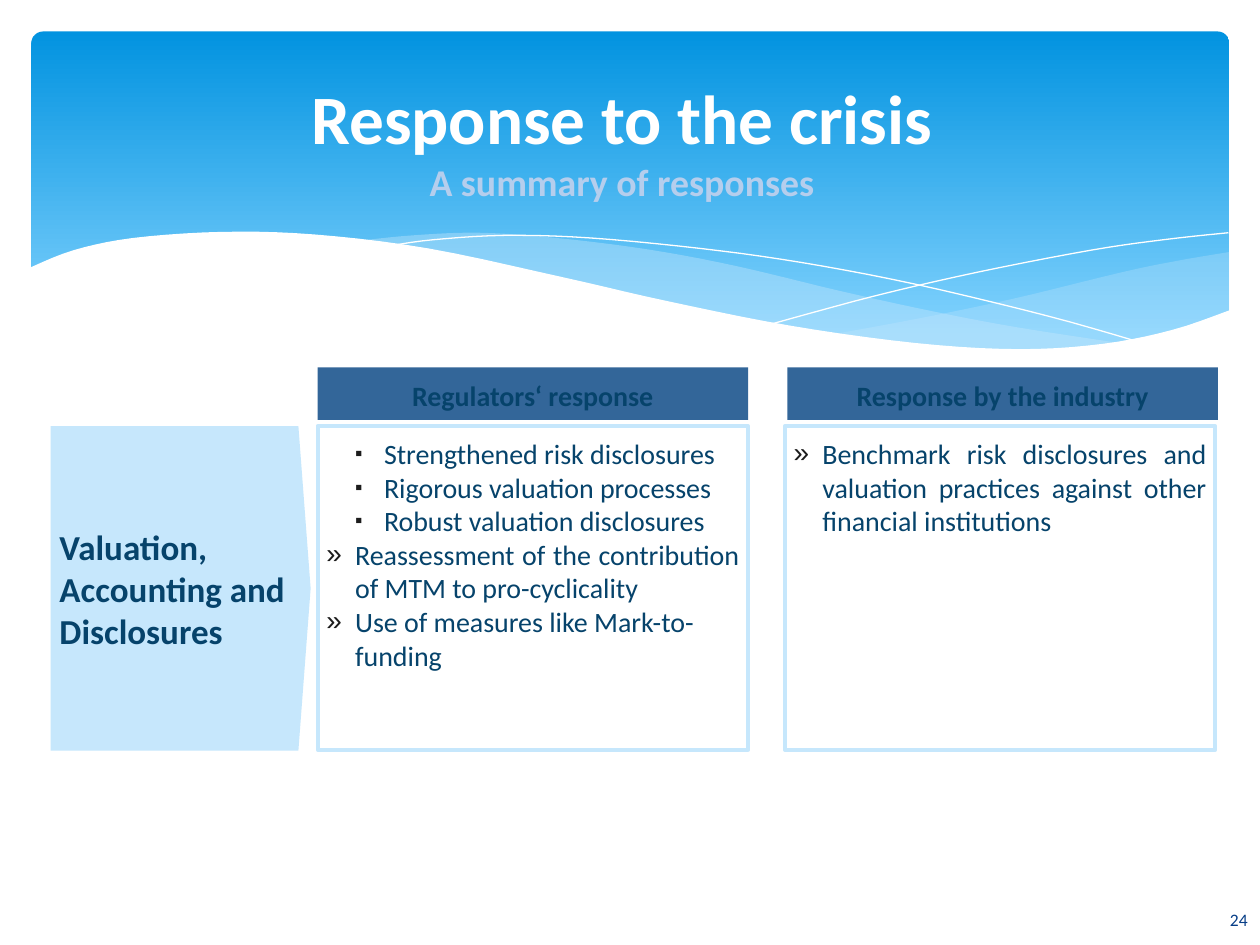
from dataclasses import dataclass

from lxml import etree
from pptx import Presentation
from pptx import util as u
from pptx.dml.color import RGBColor
from pptx.enum import shapes, text
from pptx.oxml.ns import qn

Pt = u.Pt


@dataclass(frozen=True)
class Theme:
    font: str = "Calibri"
    white: str = "FFFFFF"
    sky_top: str = "0293E0"
    sky_bottom: str = "83D3FE"
    pale: str = "C6E7FC"
    header: str = "336699"
    ink: str = "06436B"
    bullet: str = "1C1C1C"
    subtitle: str = "B5CEED"
    number: str = "073E87"
    title_size: float = 39.6
    subtitle_size: float = 21.6
    label_size: float = 20
    body_size: float = 16
    number_size: float = 10


THEME = Theme()
LEFT, CENTER = text.PP_ALIGN.LEFT, text.PP_ALIGN.CENTER
RIGHT, JUSTIFY = text.PP_ALIGN.RIGHT, text.PP_ALIGN.JUSTIFY
MIDDLE, TOP = text.MSO_ANCHOR.MIDDLE, text.MSO_ANCHOR.TOP

# Knots of the smooth edges, in points.
WHITE_EDGE = [(17, 153), (42, 143), (76, 136), (127, 132.5), (180, 134), (245, 142),
              (322, 158.5), (381, 172), (451, 186), (523, 196), (582, 199.5),
              (630, 196.5), (670, 188.5), (703.5, 177)]
RIGHT_UPPER = [(476, 191), (525, 182), (580, 170.5), (641.5, 155.5), (673, 149), (702.5, 144)]
RIGHT_LOWER = [(702.5, 178), (673, 188.5), (640, 196), (601, 199.5), (562, 199.5),
               (518, 196), (476, 191)]
MIDDLE_UPPER = [(206, 137.5), (236, 134.5), (273.5, 133), (318, 136), (370, 142.5),
                (420.5, 152), (481, 166.5), (533.5, 178), (581, 187), (643, 196.5)]
MIDDLE_LOWER = [(643, 196.5), (610.5, 199.5), (573, 200), (530, 198), (479, 191.5),
                (407.5, 178.5), (323, 160), (261, 146), (206, 137.5)]
FALLING_LINE = [(222.5, 140.5), (247.5, 137), (288.5, 134.5), (337.5, 136), (400.5, 142),
                (458, 150), (523.5, 162.5), (598.5, 180.5), (653, 196)]
RISING_LINE = [(441.5, 185), (500.5, 169), (559, 155.5), (623.5, 143), (665, 137), (702, 133)]

COLUMNS = [
    ("Regulators‘ response", 181.5, 181.5, [
        ("Strengthened risk disclosures", 1, JUSTIFY),
        ("Rigorous valuation processes", 1, JUSTIFY),
        ("Robust valuation disclosures", 1, JUSTIFY),
        ("Reassessment of the contribution of MTM to pro-cyclicality", 0, JUSTIFY),
        ("Use of measures like Mark-to-funding", 0, LEFT),
    ]),
    ("Response by the industry", 450, 448.5, [
        ("Benchmark risk disclosures and valuation practices against other "
         "financial institutions", 0, JUSTIFY),
    ]),
]


def color(value):
    return RGBColor.from_string(value)


def smooth(knots, steps=5):
    """Sample a Catmull-Rom curve through the knots."""
    padded = [knots[0], *knots, knots[-1]]
    points = [knots[0]]
    for a, b, c, d in zip(padded, padded[1:], padded[2:], padded[3:]):
        for step in range(1, steps + 1):
            t = step / steps
            points.append(tuple(
                0.5 * (2 * q + (r - p) * t + (2 * p - 5 * q + 4 * r - s) * t ** 2
                       + (3 * q - p - 3 * r + s) * t ** 3)
                for p, q, r, s in zip(a, b, c, d)))
    return points


def paint(shape, fill=None, line=None, width=0):
    shape.shadow.inherit = False
    if fill:
        shape.fill.solid()
        shape.fill.fore_color.rgb = color(fill)
    else:
        shape.fill.background()
    if line:
        shape.line.color.rgb = color(line)
        shape.line.width = Pt(width)
    else:
        shape.line.fill.background()


def add_outline(slide, points, fill=None, line=None, opacity=100):
    """Draw a closed filled area, or an open line when there is no fill."""
    (start_x, start_y), *rest = [(Pt(x), Pt(y)) for x, y in points]
    builder = slide.shapes.build_freeform(start_x, start_y)
    builder.add_line_segments(rest, close=bool(fill))
    shape = builder.convert_to_shape()
    paint(shape, fill, line)
    if opacity < 100:
        solid = shape.fill._xPr.find(qn("a:solidFill"))
        etree.SubElement(solid[0], qn("a:alpha"), val=str(opacity * 1000))


def add_box(slide, kind, box, **style):
    shape = slide.shapes.add_shape(kind, *map(Pt, box))
    paint(shape, **style)
    return shape


def set_frame(shape, anchor, side=5, top=0, bottom=0):
    frame = shape.text_frame
    values = {"word_wrap": True, "vertical_anchor": anchor,
              "margin_left": Pt(side), "margin_right": Pt(side),
              "margin_top": Pt(top), "margin_bottom": Pt(bottom)}
    for name, value in values.items():
        setattr(frame, name, value)
    return frame


def write(paragraph, words, size, ink, bold=False, align=LEFT):
    paragraph.alignment = align
    run = paragraph.add_run()
    run.text = words
    for name, value in {"name": THEME.font, "size": Pt(size), "bold": bold}.items():
        setattr(run.font, name, value)
    run.font.color.rgb = color(ink)


def add_bullet(paragraph, level):
    paragraph.level = level
    properties = paragraph._p.get_or_add_pPr()
    properties.set("marL", str(Pt(16.5 * (level + 1))))
    properties.set("indent", str(-Pt(16.5)))
    bullet_color = etree.SubElement(properties, qn("a:buClr"))
    etree.SubElement(bullet_color, qn("a:srgbClr"), val=THEME.bullet)
    if level:
        etree.SubElement(properties, qn("a:buSzPct"), val="75000")
    etree.SubElement(properties, qn("a:buFont"), typeface="Arial")
    etree.SubElement(properties, qn("a:buChar"), char="▪" if level else "»")


def add_banner(slide):
    sky = add_box(slide, shapes.MSO_SHAPE.ROUNDED_RECTANGLE, (18, 18, 684.5, 194.5))
    sky.adjustments[0] = 0.034
    sky.fill.gradient()
    sky.fill.gradient_angle = 270
    stops = [(0, THEME.sky_top), (0.9, THEME.sky_bottom)]
    for stop, (position, value) in zip(sky.fill.gradient_stops, stops):
        stop.position = position
        stop.color.rgb = color(value)
    add_outline(slide, smooth(RIGHT_UPPER) + smooth(RIGHT_LOWER), fill=THEME.pale, opacity=29)
    add_outline(slide, smooth(MIDDLE_UPPER) + smooth(MIDDLE_LOWER), fill=THEME.pale, opacity=40)
    for knots in (FALLING_LINE, RISING_LINE):
        add_outline(slide, smooth(knots), line=THEME.white)
    add_outline(slide, smooth(WHITE_EDGE) + [(703.5, 237), (17, 237)], fill=THEME.white)


def add_title(slide):
    box = slide.shapes.add_textbox(*map(Pt, (31.5, 18, 648, 99)))
    frame = set_frame(box, TOP, side=7.2, top=25)
    write(frame.paragraphs[0], "Response to the crisis", THEME.title_size, THEME.white, True, CENTER)
    write(frame.add_paragraph(), "A summary of responses", THEME.subtitle_size,
          THEME.subtitle, True, CENTER)


def add_topic(slide, words):
    plate = add_box(slide, shapes.MSO_SHAPE.PENTAGON, (29, 243.5, 148.5, 185.5), fill=THEME.pale)
    plate.adjustments[0] = 0.047
    frame = set_frame(plate, MIDDLE, top=5, bottom=5)
    write(frame.paragraphs[0], words, THEME.label_size, THEME.ink, True)


def add_column(slide, heading, heading_left, body_left, items):
    rectangle = shapes.MSO_SHAPE.RECTANGLE
    body = add_box(slide, rectangle, (body_left, 243.5, 246, 185), line=THEME.pale, width=2.25)
    frame = set_frame(body, TOP, top=6, bottom=6)
    for index, (words, level, align) in enumerate(items):
        paragraph = frame.add_paragraph() if index else frame.paragraphs[0]
        write(paragraph, words, THEME.body_size, THEME.ink, align=align)
        add_bullet(paragraph, level)
    header = add_box(slide, rectangle, (heading_left, 210, 246, 30), fill=THEME.header)
    frame = set_frame(header, MIDDLE, top=2)
    write(frame.paragraphs[0], heading, THEME.body_size, THEME.ink, True, CENTER)


def add_slide_number(slide, number):
    box = slide.shapes.add_textbox(*map(Pt, (628.5, 511, 91.5, 29)))
    frame = set_frame(box, MIDDLE, side=7.2)
    write(frame.paragraphs[0], number, THEME.number_size, THEME.number, align=RIGHT)


def main():
    presentation = Presentation()
    presentation.slide_width, presentation.slide_height = Pt(720), Pt(540)
    slide = presentation.slides.add_slide(presentation.slide_layouts[6])
    add_banner(slide)
    add_title(slide)
    add_topic(slide, "Valuation, Accounting and Disclosures")
    for column in COLUMNS:
        add_column(slide, *column)
    add_slide_number(slide, "24")
    presentation.save("out.pptx")


if __name__ == "__main__":
    main()
